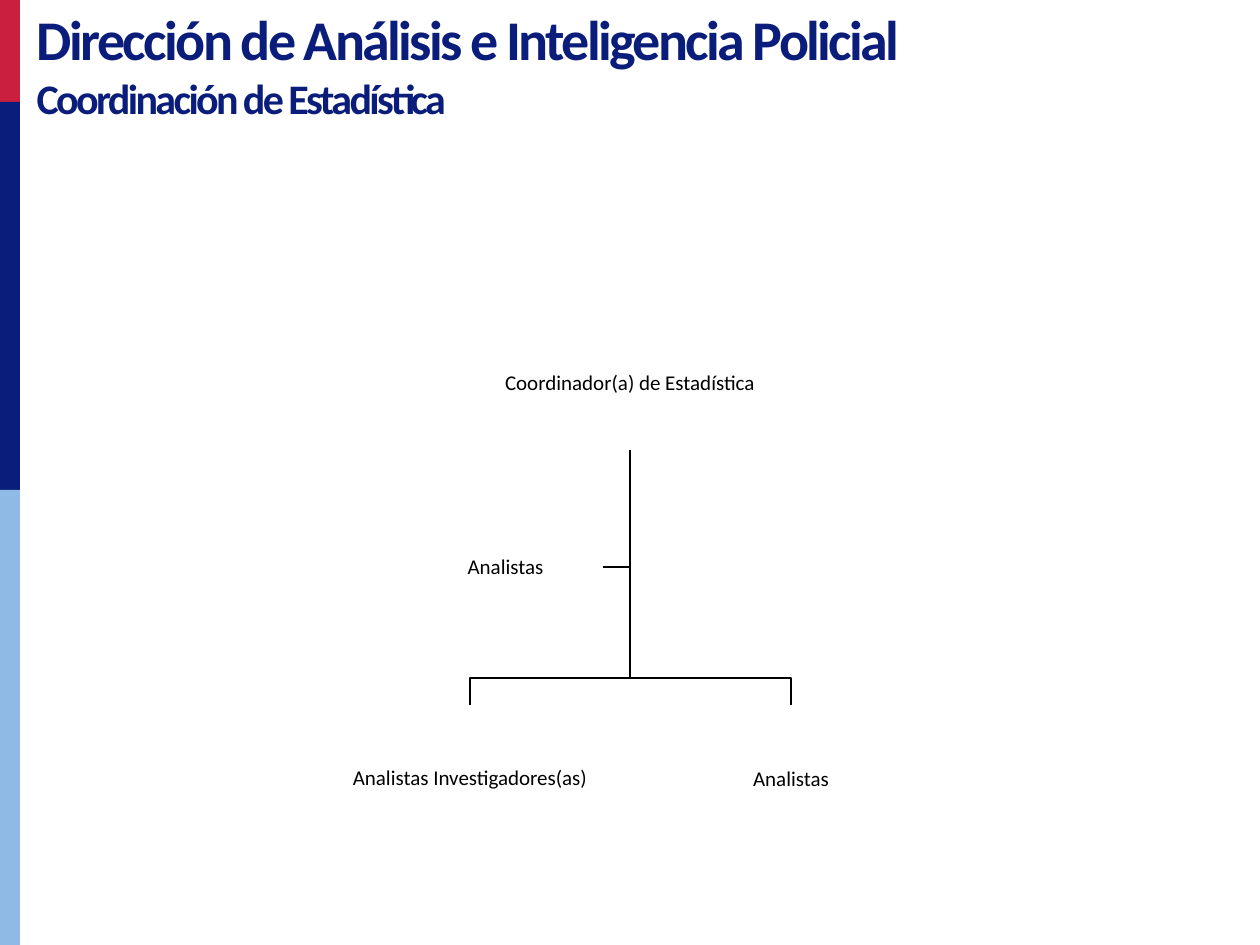
from dataclasses import dataclass

from pptx import Presentation
from pptx.dml.color import RGBColor
from pptx.enum.shapes import MSO_SHAPE
from pptx.enum.text import MSO_ANCHOR, PP_ALIGN
from pptx.util import Emu, Inches, Pt

EMU_PER_PX = 914400 / 126
FONT = "Calibri"
NAVY = "0A1D7A"


@dataclass(frozen=True)
class Bar:
    top: int
    bottom: int
    color: str


@dataclass(frozen=True)
class Post:
    text: str
    left: int
    top: int
    width: int
    height: int
    line_spacing: float = 1.0

    @property
    def center_x(self) -> int:
        return self.left + self.width // 2

    @property
    def center_y(self) -> int:
        return self.top + self.height // 2

    @property
    def right(self) -> int:
        return self.left + self.width

    @property
    def bottom(self) -> int:
        return self.top + self.height


BAR_WIDTH = 20
BARS = [
    Bar(0, 102, "CA1F3D"),
    Bar(102, 490, NAVY),
    Bar(490, 945, "8FBAE5"),
]

COORDINATOR = Post("Coordinador(a) de Estadística", 472, 315, 316, 135)
ASSISTANT = Post("Analistas", 408, 518, 195, 99, 0.9)
REPORTS = [
    Post("Analistas Investigadores(as)", 336, 705, 268, 147, 0.9),
    Post("Analistas", 657, 705, 268, 147),
]
BRANCH_Y = 678


def px(n: int) -> Emu:
    return Emu(round(n * EMU_PER_PX))


def rgb(color: str) -> RGBColor:
    return RGBColor.from_string(color)


def add_rect(slide, left: int, top: int, width: int, height: int, color: str):
    sp = slide.shapes.add_shape(MSO_SHAPE.RECTANGLE, px(left), px(top), px(width), px(height))
    sp.shadow.inherit = False
    sp.fill.solid()
    sp.fill.fore_color.rgb = rgb(color)
    sp.line.fill.background()
    return sp


def add_post(slide, post: Post) -> None:
    sp = add_rect(slide, post.left, post.top, post.width, post.height, "FFFFFF")
    tf = sp.text_frame
    tf.word_wrap = True
    tf.vertical_anchor = MSO_ANCHOR.MIDDLE
    tf.margin_left = tf.margin_right = tf.margin_top = tf.margin_bottom = Inches(0.01)
    p = tf.paragraphs[0]
    p.text = post.text
    p.alignment = PP_ALIGN.CENTER
    p.line_spacing = post.line_spacing
    p.font.name = FONT
    p.font.size = Pt(12)
    p.font.color.rgb = rgb("000000")


def add_branch(slide, points: list[tuple[int, int]]) -> None:
    builder = slide.shapes.build_freeform(*points[0], scale=EMU_PER_PX)
    builder.add_line_segments(points[1:], close=False)
    sp = builder.convert_to_shape()
    sp.shadow.inherit = False
    sp.fill.background()
    sp.line.color.rgb = rgb("000000")
    sp.line.width = Pt(1)


def set_title(slide) -> None:
    title = slide.shapes.title
    title.left, title.top, title.width, title.height = px(24), px(6), px(940), px(185)
    tf = title.text_frame
    tf.word_wrap = True
    tf.vertical_anchor = MSO_ANCHOR.TOP
    tf.text = "Dirección de Análisis e Inteligencia Policial\nCoordinación de Estadística"
    for p, size, spacing in zip(tf.paragraphs, (32, 24), (0.9, 1.0)):
        p.alignment = PP_ALIGN.LEFT
        p.line_spacing = spacing
        p.font.name = FONT
        p.font.size = Pt(size)
        p.font.bold = True
        p.font.color.rgb = rgb(NAVY)
        # Tight letter spacing, in hundredths of a point
        for r in p.runs:
            r.font._element.set("spc", "-150")


def main() -> None:
    prs = Presentation()
    prs.slide_width, prs.slide_height = Inches(10), Inches(7.5)
    slide = prs.slides.add_slide(prs.slide_layouts[5])

    # Side stripe and heading
    for bar in BARS:
        add_rect(slide, 0, bar.top, BAR_WIDTH, bar.bottom - bar.top, bar.color)
    set_title(slide)

    # Branches of the organisation chart
    trunk_x, trunk_y = COORDINATOR.center_x, COORDINATOR.bottom
    add_branch(slide, [(trunk_x, trunk_y), (trunk_x, ASSISTANT.center_y),
                       (ASSISTANT.right, ASSISTANT.center_y)])
    for post in reversed(REPORTS):
        add_branch(slide, [(trunk_x, trunk_y), (trunk_x, BRANCH_Y),
                           (post.center_x, BRANCH_Y), (post.center_x, post.top)])

    # Posts
    for post in [COORDINATOR, *REPORTS, ASSISTANT]:
        add_post(slide, post)

    prs.save("out.pptx")


if __name__ == "__main__":
    main()
